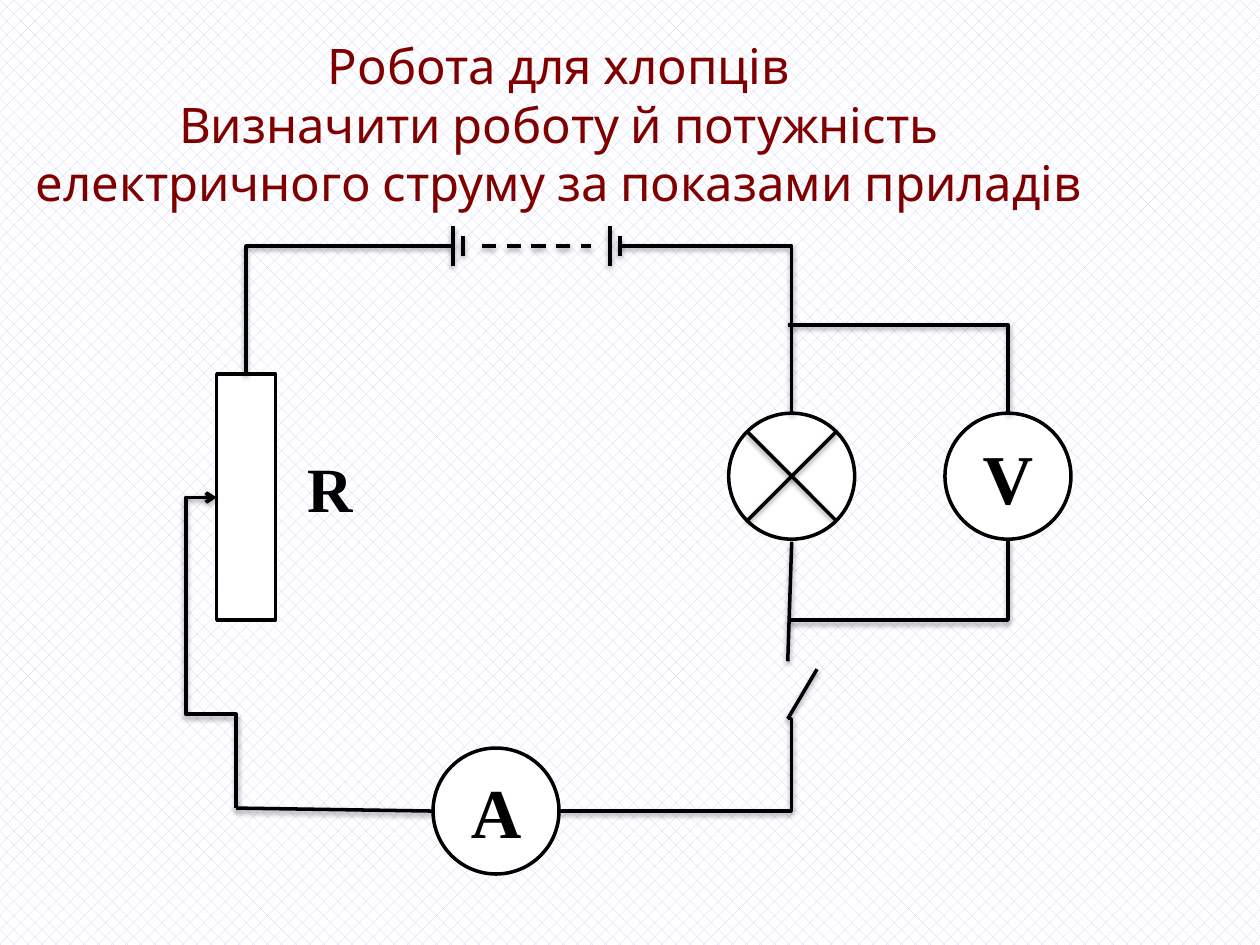
"""Build a slide with a circuit for measuring the work and power of a current."""
from dataclasses import dataclass
from typing import Optional

from lxml.etree import SubElement
from pptx import Presentation
from pptx.dml.color import RGBColor
from pptx.enum.dml import MSO_LINE, MSO_PATTERN
from pptx.enum.shapes import MSO_CONNECTOR, MSO_SHAPE
from pptx.enum.text import MSO_ANCHOR, MSO_AUTO_SIZE, PP_ALIGN
from pptx.oxml.ns import qn
from pptx.util import Cm, Pt

BLACK = RGBColor(0x00, 0x00, 0x00)
WHITE = RGBColor(0xFF, 0xFF, 0xFF)
MAROON = RGBColor(0x80, 0x00, 0x00)
LAVENDER = RGBColor(0xCC, 0xCC, 0xFF)
TITLE_FONT = "Karla"
LABEL_FONT = "Times New Roman"
LINE_WIDTH = Pt(2)
TITLE = "Робота для хлопців\vВизначити роботу й потужність електричного струму за показами приладів"


@dataclass(frozen=True)
class Part:
    left: float
    top: float
    width: float = 2.54
    height: float = 2.54
    label: str = ""
    outline: MSO_SHAPE = MSO_SHAPE.OVAL


@dataclass(frozen=True)
class Wire:
    start: tuple[float, float]
    end: tuple[float, float]
    bend: Optional[str] = None
    adjustments: tuple[int, ...] = ()
    dashed: bool = False
    arrow: bool = False


AMMETER = Part(8.73, 15.08, label="A")
VOLTMETER = Part(19.05, 8.33, label="V")
LAMP = Part(14.69, 8.33)
RHEOSTAT = Part(4.37, 7.54, 1.19, 4.96, outline=MSO_SHAPE.RECTANGLE)
PARTS = (AMMETER, VOLTMETER, LAMP, RHEOSTAT)

CORNER = "bentConnector2"
BATTERY_AXIS = 4.96
BATTERY_PLATES = ((9.13, 0.4), (9.33, 0.2), (12.3, 0.4), (12.5, 0.2))

WIRES = (
    Wire((9.13, BATTERY_AXIS), (4.96, 7.54), CORNER),
    Wire((4.37, 10.03), (4.76, 16.29), "bentConnector4", (-160000, 69800), arrow=True),
    Wire((8.73, 16.35), (4.76, 16.29)),
    *(Wire((x, BATTERY_AXIS - half), (x, BATTERY_AXIS + half)) for x, half in BATTERY_PLATES),
    Wire((12.5, BATTERY_AXIS), (15.96, 8.33), CORNER),
    Wire((15.96, 10.92), (15.88, 13.33)),
    Wire((11.27, 16.35), (15.88, 14.49), "bentConnector3", (101600,)),
    Wire((15.88, 14.49), (16.47, 13.49)),
    Wire((9.72, BATTERY_AXIS), (11.91, BATTERY_AXIS), dashed=True),
    Wire((15.88, 12.5), (20.32, 10.87), CORNER),
    Wire((15.88, 6.55), (20.32, 8.33), CORNER),
    Wire((15.06, 8.7), (16.86, 10.5)),
    Wire((16.86, 8.7), (15.06, 10.5)),
)


def format_text(frame, size: int, font_name: str, color: RGBColor, bold: bool = False) -> None:
    for para in frame.paragraphs:
        for span in para.runs:
            span.font.size = Pt(size)
            span.font.name = font_name
            span.font.bold = bold
            span.font.color.rgb = color


def add_title(page) -> None:
    title = page.shapes.title
    title.left, title.top, title.width, title.height = Cm(-0.05), Cm(0.66), Cm(22.63), Cm(3.66)
    frame = title.text_frame
    frame.text = TITLE
    frame.word_wrap = True
    frame.auto_size = MSO_AUTO_SIZE.NONE
    frame.vertical_anchor = MSO_ANCHOR.MIDDLE
    frame.paragraphs[0].alignment = PP_ALIGN.CENTER
    format_text(frame, 28, TITLE_FONT, MAROON)


def add_part(page, part: Part) -> None:
    shape = page.shapes.add_shape(
        part.outline, Cm(part.left), Cm(part.top), Cm(part.width), Cm(part.height)
    )
    shape.shadow.inherit = False
    shape.fill.solid()
    shape.fill.fore_color.rgb = WHITE
    shape.line.color.rgb = BLACK
    shape.line.width = LINE_WIDTH
    if part.label:
        frame = shape.text_frame
        frame.text = part.label
        frame.vertical_anchor = MSO_ANCHOR.MIDDLE
        frame.paragraphs[0].alignment = PP_ALIGN.CENTER
        format_text(frame, 40, LABEL_FONT, BLACK, bold=True)


def add_shadow(properties) -> None:
    effects = SubElement(properties, qn("a:effectLst"))
    shadow = SubElement(
        effects, qn("a:outerShdw"), blurRad="40000", dist="20000", dir="5400000", rotWithShape="0"
    )
    color = SubElement(shadow, qn("a:srgbClr"), val=str(BLACK))
    SubElement(color, qn("a:alpha"), val="38000")


def add_wire(page, wire: Wire) -> None:
    kind = MSO_CONNECTOR.ELBOW if wire.bend else MSO_CONNECTOR.STRAIGHT
    connector = page.shapes.add_connector(kind, *(Cm(value) for value in wire.start + wire.end))
    connector.line.color.rgb = BLACK
    connector.line.width = LINE_WIDTH
    if wire.dashed:
        connector.line.dash_style = MSO_LINE.DASH
    properties = connector._element.spPr
    if wire.bend:
        geometry = properties.find(qn("a:prstGeom"))
        geometry.set("prst", wire.bend)
        guides = geometry.find(qn("a:avLst"))
        for number, value in enumerate(wire.adjustments, 1):
            name = "adj" if len(wire.adjustments) == 1 else f"adj{number}"
            name = "adj1" if wire.bend == "bentConnector3" else name
            SubElement(guides, qn("a:gd"), name=name, fmla=f"val {value}")
    if wire.arrow:
        SubElement(properties.find(qn("a:ln")), qn("a:headEnd"), type="arrow")
    add_shadow(properties)


def add_rheostat_label(page) -> None:
    box = page.shapes.add_textbox(Cm(5.94), Cm(8.94), Cm(1.83), Cm(1.8))
    box.text_frame.word_wrap = True
    box.text_frame.text = "R"
    format_text(box.text_frame, 36, LABEL_FONT, BLACK, bold=True)


def main() -> None:
    deck = Presentation()
    deck.slide_width, deck.slide_height = Cm(25.4), Cm(19.05)
    page = deck.slides.add_slide(deck.slide_layouts[5])
    backdrop = page.background.fill
    backdrop.patterned()
    backdrop.pattern = MSO_PATTERN.PERCENT_25
    backdrop.fore_color.rgb = LAVENDER
    backdrop.back_color.rgb = WHITE
    add_title(page)
    for part in PARTS:
        add_part(page, part)
    for wire in WIRES:
        add_wire(page, wire)
    add_rheostat_label(page)
    deck.save("out.pptx")


if __name__ == "__main__":
    main()
